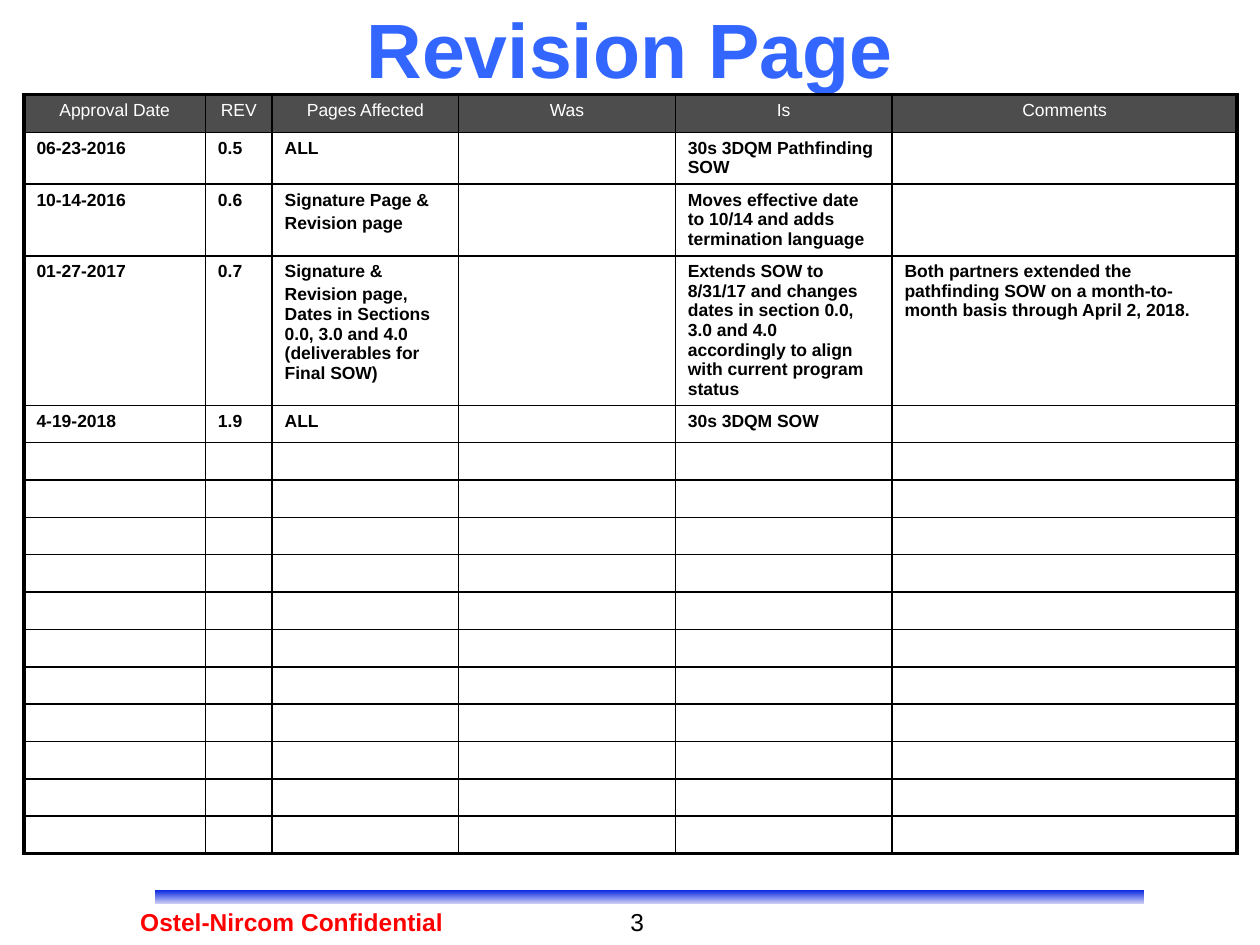
from pptx import Presentation
from pptx.dml.color import RGBColor
from pptx.enum.shapes import MSO_SHAPE
from pptx.enum.text import MSO_ANCHOR, MSO_AUTO_SIZE, PP_ALIGN
from pptx.oxml.ns import qn
from pptx.util import Inches, Pt
from lxml.etree import SubElement

COLORS = {
    "title": "3366FF", "head": "4D4D4D", "white": "FFFFFF", "ink": "000000",
    "red": "FF0000", "deep": "0020E0", "pale": "DADAF6",
}
HEADS = ["Approval Date", "REV", "Pages Affected", "Was", "Is", "Comments"]
LOG = [
    ["06-23-2016", "0.5", "ALL", "", "30s 3DQM Pathfinding SOW", ""],
    ["10-14-2016", "0.6", "Signature Page &\nRevision page", "",
     "Moves effective date to 10/14 and adds termination language", ""],
    ["01-27-2017", "0.7",
     "Signature &\nRevision page, Dates in Sections 0.0, 3.0 and 4.0 "
     "(deliverables for Final SOW)", "",
     "Extends SOW to 8/31/17 and changes dates in section 0.0, 3.0 and 4.0 "
     "accordingly to align with current program status",
     "Both partners extended the pathfinding SOW on a month-to-month basis "
     "through April 2, 2018."],
    ["4-19-2018", "1.9", "ALL", "", "30s 3DQM SOW", ""],
]
BLANKS = 11
WIDTHS = [1.44, 0.53, 1.48, 1.72, 1.72, 2.74]
# The last filled row and the blank rows share one height
HEIGHTS = [0.3, 0.41, 0.57, 1.18] + [3.56 / 12] * (BLANKS + 1)


def rgb(name):
    return RGBColor.from_string(COLORS[name])


class Page:
    font = "Arial"

    def __init__(self, deck):
        self.slide = deck.slides.add_slide(deck.slide_layouts[5])

    def style(self, para, size, color, bold=False, align=PP_ALIGN.LEFT):
        para.alignment = align
        font = para.font
        font.name, font.size, font.bold = self.font, Pt(size), bold
        font.color.rgb = rgb(color)

    def place(self, shape, box):
        shape.left, shape.top, shape.width, shape.height = map(Inches, box)

    def title(self, text, box):
        shape = self.slide.shapes.title
        self.place(shape, box)
        frame = shape.text_frame
        frame.text = text
        frame.auto_size = MSO_AUTO_SIZE.NONE
        frame.vertical_anchor = MSO_ANCHOR.MIDDLE
        self.style(frame.paragraphs[0], 44, "title", True, PP_ALIGN.CENTER)

    def text(self, text, box, color, bold, align):
        frame = self.slide.shapes.add_textbox(*map(Inches, box)).text_frame
        frame.word_wrap = True
        frame.text = text
        self.style(frame.paragraphs[0], 14, color, bold, align)

    def bar(self, box):
        shape = self.slide.shapes.add_shape(
            MSO_SHAPE.RECTANGLE, *map(Inches, box))
        shape.shadow.inherit = False
        shape.fill.gradient()
        shape.fill.gradient_angle = 270
        for stop, name in zip(shape.fill.gradient_stops, ("deep", "pale")):
            stop.color.rgb = rgb(name)
        shape.line.color.rgb = rgb("white")
        shape.line.width = Pt(1)

    def border(self, cell, side, width):
        props = cell._tc.get_or_add_tcPr()
        line = SubElement(props, qn("a:ln" + side), w=str(Pt(width)))
        fill = SubElement(line, qn("a:solidFill"))
        SubElement(fill, qn("a:srgbClr"), val=COLORS["ink"])

    def cell(self, cell, text, head, edges):
        for side, outer in edges.items():
            self.border(cell, side, 2.25 if outer else 1)
        if head:
            cell.fill.solid()
            cell.fill.fore_color.rgb = rgb("head")
        else:
            cell.fill.background()
        cell.text = text
        for i, para in enumerate(cell.text_frame.paragraphs):
            if head:
                self.style(para, 10, "white", align=PP_ALIGN.CENTER)
            else:
                self.style(para, 10, "ink", True)
            if i:
                para.space_before = Pt(2)
            if not text:
                # Keeps blank rows at the small text height
                SubElement(para._p, qn("a:endParaRPr"), sz="1000")

    def table(self, rows, left, top):
        box = left, top, sum(WIDTHS), sum(HEIGHTS)
        table = self.slide.shapes.add_table(
            len(rows), len(WIDTHS), *map(Inches, box)).table
        table.first_row = table.horz_banding = False
        for col, width in zip(table.columns, WIDTHS):
            col.width = Inches(width)
        for row, height in zip(table.rows, HEIGHTS):
            row.height = Inches(height)
        for r, row in enumerate(rows):
            for c, text in enumerate(row):
                edges = {"L": c == 0, "R": c == len(row) - 1,
                         "T": r == 0, "B": r == len(rows) - 1}
                self.cell(table.cell(r, c), text, r == 0, edges)


def main():
    deck = Presentation()
    deck.slide_width, deck.slide_height = Inches(10), Inches(7.5)
    page = Page(deck)

    # Footer rule
    page.bar((1.22, 7.06, 7.87, 0.12))

    # Title and revision log
    page.title("Revision Page", (0.5, 0, 9, 0.75))
    blanks = [[""] * len(HEADS)] * BLANKS
    page.table([HEADS] + LOG + blanks, 0.19, 0.75)

    # Footer text
    page.text("3", (4.07, 7.15, 1.14, 0.27), "ink", False, PP_ALIGN.RIGHT)
    page.text("Ostel-Nircom Confidential", (0.72, 7.15, 3.19, 0.26),
              "red", True, PP_ALIGN.CENTER)

    deck.save("out.pptx")


if __name__ == "__main__":
    main()
